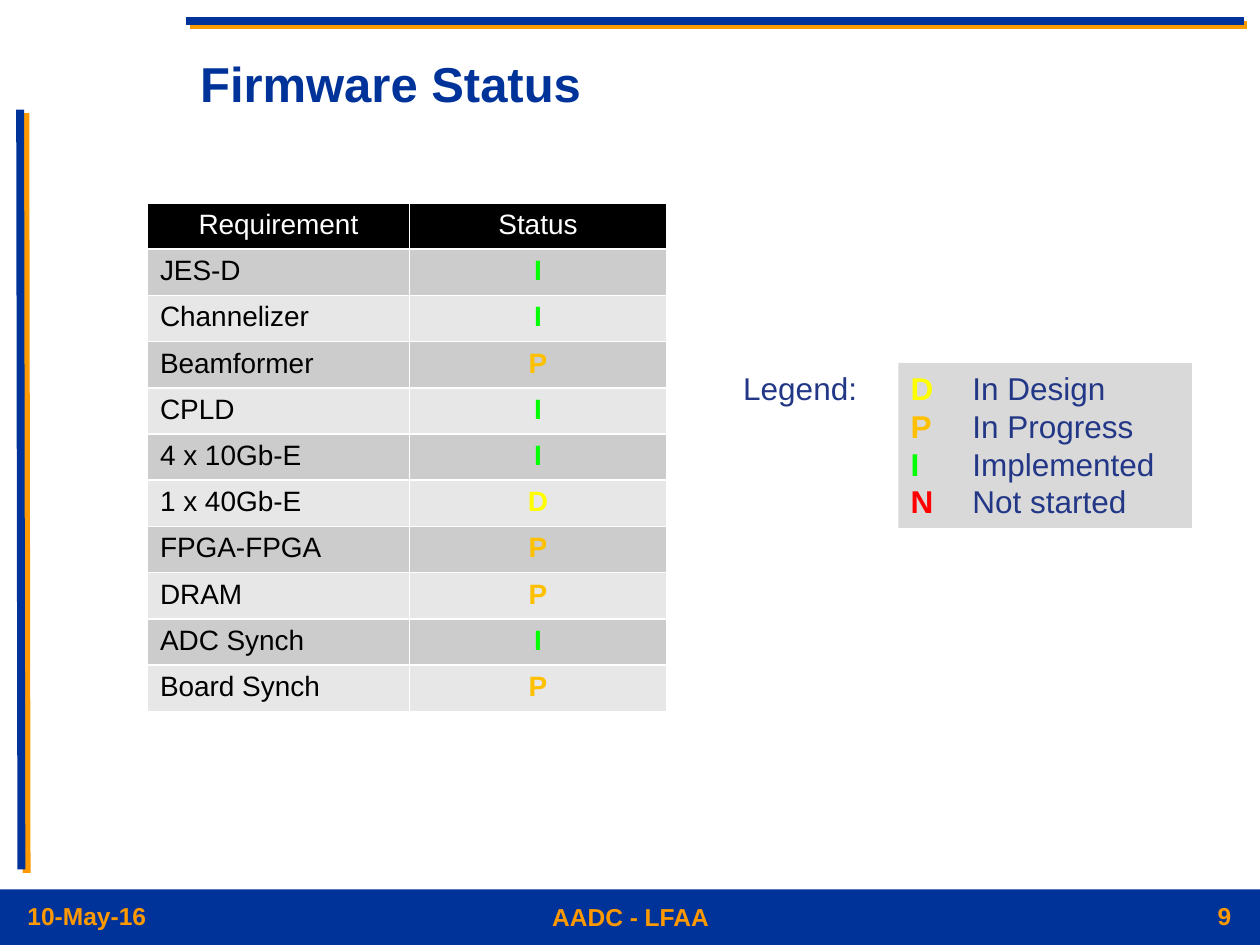
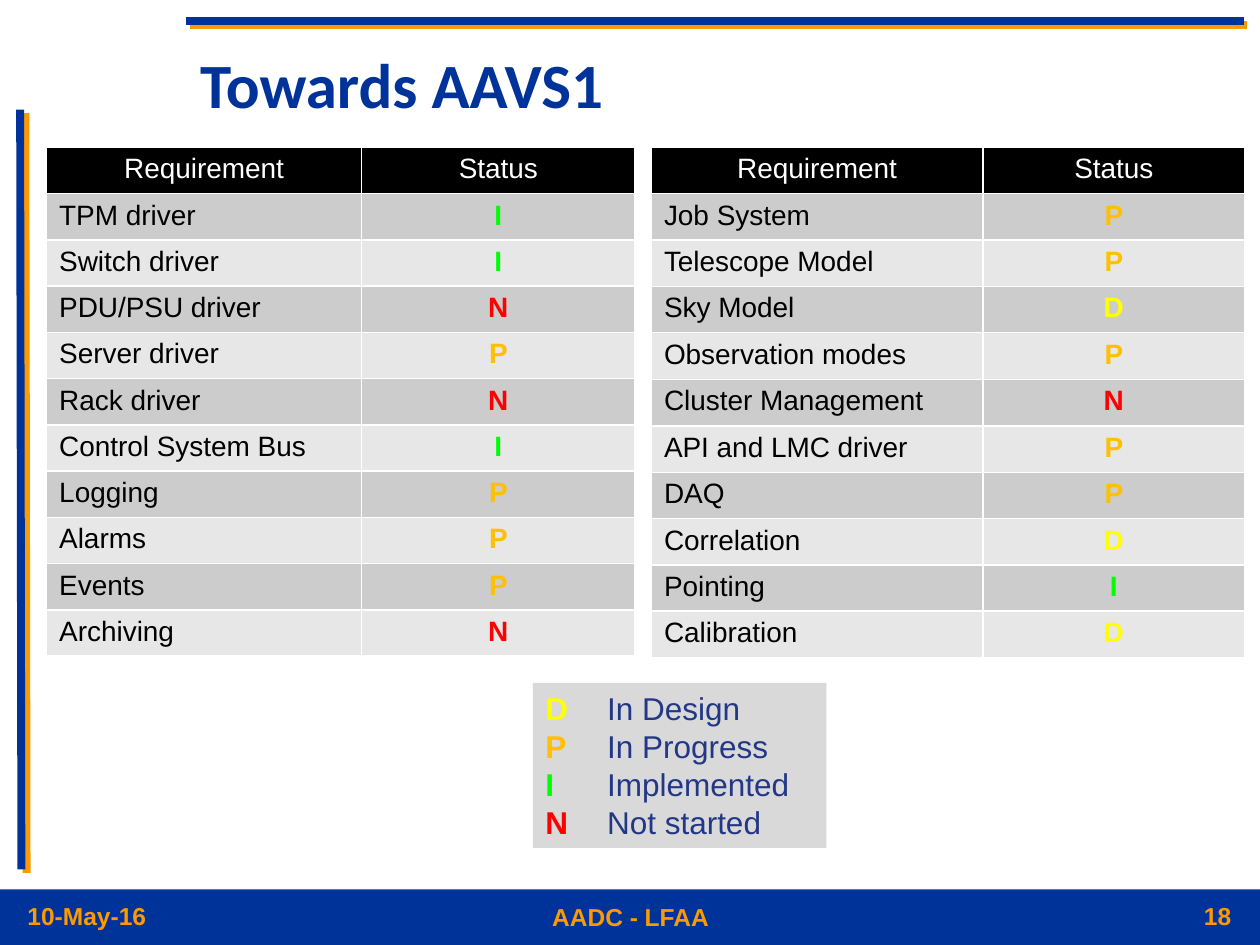
from dataclasses import dataclass

from lxml.etree import SubElement
from pptx import Presentation
from pptx.dml.color import RGBColor
from pptx.enum.shapes import MSO_CONNECTOR as Connector, MSO_SHAPE as Shape
from pptx.enum.text import MSO_ANCHOR as Anchor, MSO_AUTO_SIZE as AutoSize, PP_ALIGN as Align
from pptx.oxml.ns import qn
from pptx.util import Inches, Pt


@dataclass(frozen=True)
class Theme:
    navy: str = "003399"
    orange: str = "FF9900"
    legend_text: str = "233787"
    legend_fill: str = "D9D9D9"
    black: str = "000000"
    white: str = "FFFFFF"
    bands: tuple = ("E7E7E7", "CCCCCC")
    font: str = "Arial"
    footer_size: int = 14
    table_size: int = 16
    legend_size: int = 18


theme = Theme()
statuses = {
    "D": ("In Design", "FFFF00"),
    "P": ("In Progress", "FFC000"),
    "I": ("Implemented", "00FF00"),
    "N": ("Not started", "FF0000"),
}
rules = [
    ((0.16, 0.87, 0.17, 6.9), 3.6, 34),
    ((9.87, 0.17, 1.48, 0.17), 2.8, 45),
]
pages = [
    {
        "title": ("Firmware Status", 28, "Arial"),
        "number": "9",
        "legend": (7.13, 2.88),
        "legend_label": "Legend:",
        "tables": [
            {
                "place": (1.17, 1.61),
                "columns": (2.08, 2.04),
                "tall_rows": (),
                "items": [
                    ("JES-D", "I"), ("Channelizer", "I"), ("Beamformer", "P"),
                    ("CPLD", "I"), ("4 x 10Gb-E", "I"), ("1 x 40Gb-E", "D"),
                    ("FPGA-FPGA", "P"), ("DRAM", "P"), ("ADC Synch", "I"),
                    ("Board Synch", "P"),
                ],
            },
        ],
    },
    {
        "title": ("Towards AAVS1", 36, "Calibri"),
        "number": "18",
        "legend": (4.23, 5.42),
        "legend_label": None,
        "tables": [
            {
                "place": (0.37, 1.17),
                "columns": (2.5, 2.17),
                "tall_rows": (),
                "items": [
                    ("TPM driver", "I"), ("Switch driver", "I"), ("PDU/PSU driver", "N"),
                    ("Server driver", "P"), ("Rack driver", "N"), ("Control System Bus", "I"),
                    ("Logging", "P"), ("Alarms", "P"), ("Events", "P"),
                    ("Archiving", "N"),
                ],
            },
            {
                "place": (5.17, 1.17),
                "columns": (2.63, 2.08),
                "tall_rows": (2, 4, 5, 6),
                "items": [
                    ("Job System", "P"), ("Telescope Model", "P"), ("Sky Model", "D"),
                    ("Observation modes", "P"), ("Cluster Management", "N"),
                    ("API and LMC driver", "P"), ("DAQ", "P"), ("Correlation", "D"),
                    ("Pointing", "I"), ("Calibration", "D"),
                ],
            },
        ],
    },
]


def style_run(run, size, color, bold=False, font=theme.font):
    run.font.size = Pt(size)
    run.font.name = font
    run.font.bold = bold
    run.font.color.rgb = RGBColor.from_string(color)


def add_text(slide, box, text, size, color, bold=True, align=Align.LEFT, font=theme.font):
    frame = slide.shapes.add_textbox(*map(Inches, box)).text_frame
    frame.word_wrap = True
    frame.text = text
    frame.paragraphs[0].alignment = align
    style_run(frame.paragraphs[0].runs[0], size, color, bold, font)
    return frame


prs = Presentation()
prs.slide_width = Inches(10)
prs.slide_height = Inches(7.5)

for page in pages:
    slide = prs.slides.add_slide(prs.slide_layouts[6])

    footer_band = slide.shapes.add_shape(
        Shape.RECTANGLE, 0, Inches(7.06), prs.slide_width, Inches(0.44))
    footer_band.shadow.inherit = False
    footer_band.fill.solid()
    footer_band.fill.fore_color.rgb = RGBColor.from_string(theme.navy)
    footer_band.line.fill.background()

    for ends, distance, angle in rules:
        rule = slide.shapes.add_connector(Connector.STRAIGHT, *map(Inches, ends))
        rule.line.width = Pt(4.5)
        rule.line.color.rgb = RGBColor.from_string(theme.navy)
        effects = SubElement(rule._element.spPr, qn("a:effectLst"))
        shadow = SubElement(effects, qn("a:outerShdw"), dist=str(Pt(distance)),
                            dir=str(angle * 60000), algn="ctr", rotWithShape="0")
        SubElement(shadow, qn("a:srgbClr"), val=theme.orange)

    for box, text, align in [
        ((3.04, 7.11, 3.93, 0.36), "AADC - LFAA", Align.CENTER),
        ((0.12, 7.1, 1.74, 0.36), "10-May-16", Align.LEFT),
        ((8.13, 7.1, 1.74, 0.36), page["number"], Align.RIGHT),
    ]:
        add_text(slide, box, text, theme.footer_size, theme.orange, align=align)

    title, title_size, title_font = page["title"]
    title_frame = add_text(slide, (1.49, 0.22, 8.41, 0.88), title, title_size,
                           theme.navy, font=title_font)
    title_frame.vertical_anchor = Anchor.MIDDLE

    for plan in page["tables"]:
        rows = [("Requirement", "Status"), *plan["items"]]
        heights = [0.37 if i in plan["tall_rows"] else 0.34 for i in range(len(rows))]
        requirements = slide.shapes.add_table(
            len(rows), 2, *map(Inches, plan["place"]),
            Inches(sum(plan["columns"])), Inches(sum(heights))).table
        for column, width in zip(requirements.columns, plan["columns"]):
            column.width = Inches(width)
        for row_index, (values, height) in enumerate(zip(rows, heights)):
            requirements.rows[row_index].height = Inches(height)
            is_header = row_index == 0
            for column_index, value in enumerate(values):
                is_status = column_index == 1 and not is_header
                if is_header:
                    color = theme.white
                elif is_status:
                    color = statuses[value][1]
                else:
                    color = theme.black
                cell = requirements.cell(row_index, column_index)
                cell.fill.solid()
                cell.fill.fore_color.rgb = RGBColor.from_string(
                    theme.black if is_header else theme.bands[row_index % 2])
                cell.text_frame.text = value
                paragraph = cell.text_frame.paragraphs[0]
                paragraph.alignment = Align.CENTER if is_header or is_status else Align.LEFT
                style_run(paragraph.runs[0], theme.table_size, color, is_status)

    if page["legend_label"]:
        label_frame = add_text(slide, (5.8, 2.88, 1.18, 0.4), page["legend_label"],
                               theme.legend_size, theme.legend_text, bold=False)
        label_frame.word_wrap = False

    legend = slide.shapes.add_shape(
        Shape.RECTANGLE, *map(Inches, page["legend"]), Inches(2.33), Inches(1.31))
    legend.shadow.inherit = False
    legend.fill.solid()
    legend.fill.fore_color.rgb = RGBColor.from_string(theme.legend_fill)
    legend.line.fill.background()
    legend_frame = legend.text_frame
    legend_frame.word_wrap = True
    legend_frame.auto_size = AutoSize.SHAPE_TO_FIT_TEXT
    legend_frame.vertical_anchor = Anchor.TOP
    legend_frame.text = "\n".join(statuses)
    for paragraph, (meaning, color) in zip(legend_frame.paragraphs, statuses.values()):
        tabs = SubElement(paragraph._p.get_or_add_pPr(), qn("a:tabLst"))
        SubElement(tabs, qn("a:tab"), pos=str(Inches(0.49)), algn="l")
        paragraph.alignment = Align.LEFT
        style_run(paragraph.runs[0], theme.legend_size, color, bold=True)
        meaning_run = paragraph.add_run()
        meaning_run.text = f"\t{meaning}"
        style_run(meaning_run, theme.legend_size, theme.legend_text)

prs.save("out.pptx")
